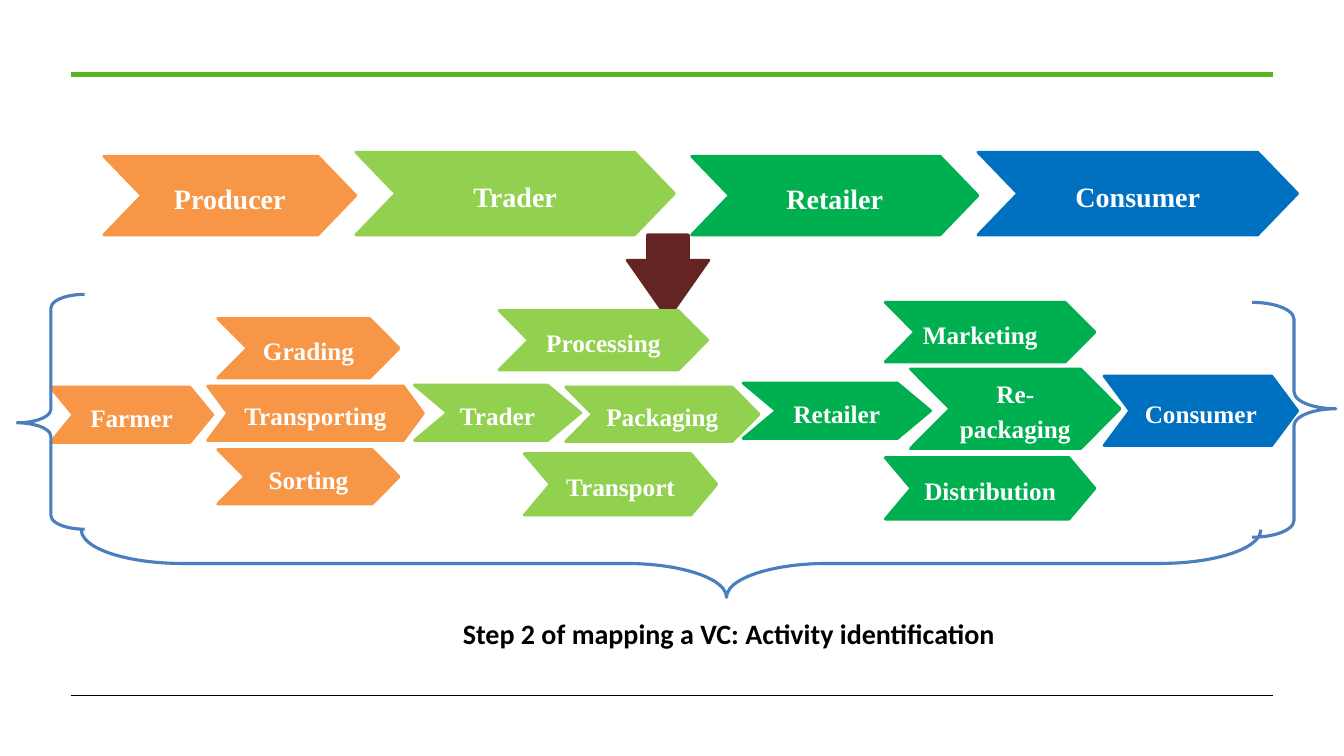
from dataclasses import dataclass

from lxml import etree
from pptx import Presentation
from pptx.dml.color import RGBColor
from pptx.enum.shapes import MSO_CONNECTOR, MSO_SHAPE
from pptx.enum.text import MSO_ANCHOR, PP_ALIGN
from pptx.oxml.ns import qn
from pptx.util import Inches, Pt


@dataclass(frozen=True)
class Theme:
    """Colours, fonts and type sizes of the slide."""
    orange: str = "F79646"
    lime: str = "92D050"
    green: str = "00B050"
    blue: str = "0070C0"
    maroon: str = "632523"
    brace: str = "4B7EBC"
    rule: str = "58B41F"
    black: str = "000000"
    white: str = "FFFFFF"
    label_font: str = "Times New Roman"
    caption_font: str = "Calibri"
    stage_size: int = 20
    activity_size: int = 18
    caption_size: int = 20


T = Theme()

STAGES = [
    ("Consumer", T.blue, (9.7, 1.51, 3.17, 0.82), 0.482),
    ("Trader", T.lime, (3.53, 1.51, 3.16, 0.82), 0.482),
    ("Producer", T.orange, (1.03, 1.55, 2.5, 0.78), 0.482),
    ("Retailer", T.green, (6.86, 1.55, 2.84, 0.78), 0.482),
]
ACTIVITIES = [
    ("Farmer", T.orange, (0.5, 3.84, 1.61, 0.55), 0.411),
    ("Grading", T.orange, (2.16, 3.16, 1.8, 0.59), 0.497),
    ("Sorting", T.orange, (2.16, 4.46, 1.8, 0.54), 0.497),
    ("Transporting", T.orange, (2.06, 3.83, 2.14, 0.54), 0.369),
    ("Trader", T.lime, (4.11, 3.82, 1.65, 0.55), 0.597),
    ("Processing", T.lime, (4.95, 3.08, 2.07, 0.59), 0.497),
    ("Packaging", T.lime, (5.61, 3.84, 1.92, 0.54), 0.497),
    ("Transport", T.lime, (5.2, 4.5, 1.91, 0.61), 0.422),
    ("Retailer", T.green, (7.37, 3.8, 1.86, 0.55), 0.597),
    ("Marketing", T.green, (8.78, 3, 2.08, 0.59), 0.497),
    ("Re-packaging", T.green, (9.03, 3.66, 2.08, 0.79), 0.497),
    ("Distribution", T.green, (8.78, 4.54, 2.08, 0.61), 0.422),
    ("Consumer", T.blue, (10.95, 3.73, 1.92, 0.69), 0.372),
]
BRACES = [
    ((12.42, 3, 0.83, 2.33), 0, 0.202),
    ((0.17, 2.92, 0.67, 2.33), 180, 0.202),
    ((6.32, -0.26, 0.67, 11.7), 90, 1.495),
]


def rgb(color):
    """Turn a hex string into a colour."""
    return RGBColor.from_string(color)


def apply(target, **values):
    """Set each given attribute on the target."""
    for name, value in values.items():
        setattr(target, name, value)


def set_line(line, color, width):
    """Give a line its colour and width in points."""
    line.color.rgb = rgb(color)
    line.width = Pt(width)


def write(tf, text, size, font, color, align, spacing=None):
    """Write one bold paragraph into a text frame."""
    apply(tf, word_wrap=True, vertical_anchor=MSO_ANCHOR.MIDDLE)
    p = tf.paragraphs[0]
    apply(p, alignment=align, line_spacing=spacing)
    r = p.add_run()
    r.text = text
    apply(r.font, size=Pt(size), name=font, bold=True)
    r.font.color.rgb = rgb(color)


def add_preset(s, kind, box, adjustments, color, width, filled=True):
    """Add a preset shape with its adjustments, outline and optional fill."""
    sp = s.shapes.add_shape(kind, *map(Inches, box))
    sp.shadow.inherit = False
    for i, value in enumerate(adjustments):
        sp.adjustments[i] = value
    set_line(sp.line, color, width)
    if filled:
        sp.fill.solid()
        sp.fill.fore_color.rgb = rgb(color)
    else:
        sp.fill.background()
    return sp


def add_chevron(s, label, color, box, point, size):
    """Add a labelled chevron."""
    sp = add_preset(s, MSO_SHAPE.CHEVRON, box, [point], color, 2)
    apply(sp.text_frame, margin_left=Inches(0.08), margin_right=Inches(0.08))
    align = PP_ALIGN.LEFT if label == "Marketing" else PP_ALIGN.CENTER
    write(sp.text_frame, label, size, T.label_font, T.white, align, 1.15)


def add_rule(s, y, color, width):
    """Add a horizontal rule across the slide."""
    line = s.shapes.add_connector(
        MSO_CONNECTOR.STRAIGHT, Inches(0.7), Inches(y), Inches(12.63), Inches(y))
    set_line(line.line, color, width)
    etree.SubElement(line._element.spPr, qn("a:effectLst"))


def add_caption(s, text):
    """Add the caption under the map."""
    tb = s.shapes.add_textbox(*map(Inches, (3.8, 6.06, 6.86, 0.44)))
    write(tb.text_frame, text, T.caption_size, T.caption_font, T.black, PP_ALIGN.CENTER)


def main():
    """Build the value chain slide."""
    prs = Presentation()
    apply(prs, slide_width=Inches(13.33), slide_height=Inches(7.5))
    s = prs.slides.add_slide(prs.slide_layouts[6])
    add_rule(s, 0.74, T.rule, 3)
    add_rule(s, 6.9, T.black, 0.48)
    add_preset(s, MSO_SHAPE.DOWN_ARROW, (6.22, 2.33, 0.81, 0.83), [0.5, 0.714], T.maroon, 2)
    for group, size in ((STAGES, T.stage_size), (ACTIVITIES, T.activity_size)):
        for chevron in group:
            add_chevron(s, *chevron, size)
    add_caption(s, "Step 2 of mapping a VC: Activity identification")
    for box, rotation, curl in BRACES:
        brace = add_preset(
            s, MSO_SHAPE.RIGHT_BRACE, box, [curl, 0.453], T.brace, 2.25, filled=False)
        brace.rotation = rotation
    prs.save("out.pptx")


if __name__ == "__main__":
    main()
